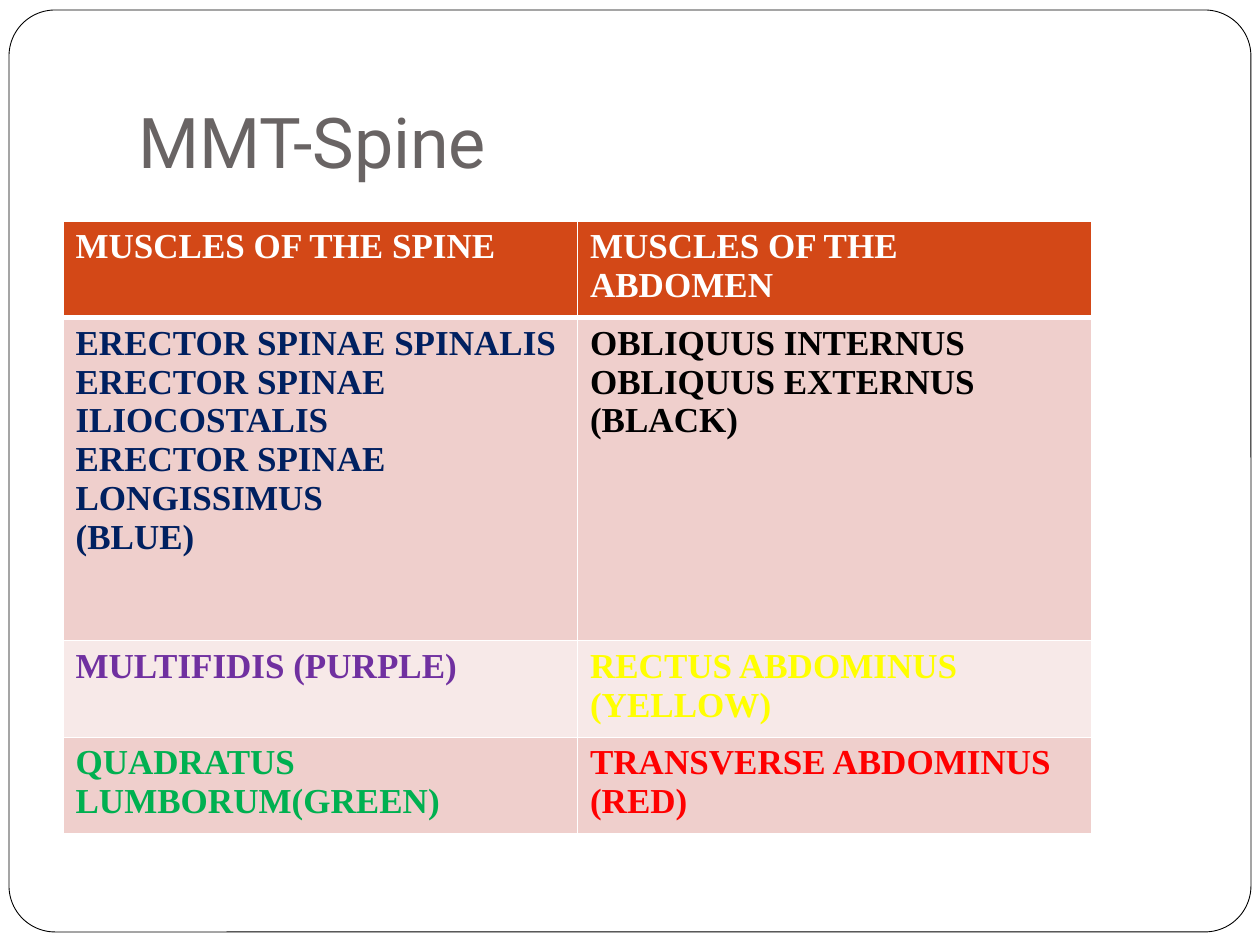
from lxml.etree import SubElement
from pptx import Presentation
from pptx.dml.color import RGBColor
from pptx.enum.shapes import MSO_SHAPE
from pptx.enum.text import MSO_ANCHOR
from pptx.oxml.ns import qn
from pptx.util import Pt

PX_PER_INCH = 126
EMU_PER_INCH = 914400

WHITE = RGBColor(0xFF, 0xFF, 0xFF)
BLACK = RGBColor(0x00, 0x00, 0x00)
GRAY = RGBColor(0x69, 0x64, 0x64)
ORANGE = RGBColor(0xD3, 0x48, 0x17)
ROSE = RGBColor(0xEF, 0xCF, 0xCC)
PALE_ROSE = RGBColor(0xF7, 0xE9, 0xE8)
NAVY = RGBColor(0x00, 0x20, 0x60)
PURPLE = RGBColor(0x70, 0x30, 0xA0)
YELLOW = RGBColor(0xFF, 0xFF, 0x00)
GREEN = RGBColor(0x00, 0xB0, 0x50)
RED = RGBColor(0xFF, 0x00, 0x00)


def px(length):
    return round(length * EMU_PER_INCH / PX_PER_INCH)


class SlideBuilder:
    title_font, title_size = "Roboto", 40
    table_font, table_size = "Times New Roman", 20

    def __init__(self, slide):
        self.slide = slide

    def frame(self, left, top, width, height, corner):
        border = self.slide.shapes.add_shape(
            MSO_SHAPE.ROUNDED_RECTANGLE, px(left), px(top), px(width), px(height))
        border.adjustments[0] = corner
        border.shadow.inherit = False
        border.fill.solid()
        border.fill.fore_color.rgb = WHITE
        border.line.color.rgb = BLACK
        border.line.width = Pt(0.5)

    def run(self, paragraph, text, font, size, color, bold=False):
        run = paragraph.add_run()
        run.text = text
        run.font.name = font
        run.font.size = Pt(size)
        run.font.color.rgb = color
        run.font.bold = bold

    def title(self, text, left, top, width, height):
        box = self.slide.shapes.add_textbox(px(left), px(top), px(width), px(height))
        frame = box.text_frame
        frame.word_wrap = True
        frame.vertical_anchor = MSO_ANCHOR.BOTTOM
        frame.margin_bottom = px(13)
        self.run(frame.paragraphs[0], text, self.title_font, self.title_size, GRAY)

    def table(self, rows, left, top, width, heights):
        columns = len(rows[0][1])
        table = self.slide.shapes.add_table(
            len(rows), columns, px(left), px(top), px(width), px(sum(heights))).table
        for column in table.columns:
            column.width = px(width / columns)
        for r, (fill, cells) in enumerate(rows):
            table.rows[r].height = px(heights[r])
            for c, (color, lines) in enumerate(cells):
                top_width = 3 if r == 1 else 1
                bottom_width = 3 if r == 0 else 1
                self.cell(table.cell(r, c), fill, color, lines, top_width, bottom_width)

    def cell(self, cell, fill, color, lines, top_width, bottom_width):
        # Borders come before the fill in the cell properties
        properties = cell._tc.get_or_add_tcPr()
        for side, width in zip("LRTB", (1, 1, top_width, bottom_width)):
            line = SubElement(properties, qn(f"a:ln{side}"), w=str(Pt(width)))
            SubElement(SubElement(line, qn("a:solidFill")), qn("a:srgbClr"), val=str(WHITE))
        cell.fill.solid()
        cell.fill.fore_color.rgb = fill
        frame = cell.text_frame
        for i, text in enumerate(lines):
            paragraph = frame.add_paragraph() if i else frame.paragraphs[0]
            self.run(paragraph, text, self.table_font, self.table_size, color, bold=True)


MUSCLE_ROWS = [
    (ORANGE, [(WHITE, ["MUSCLES OF THE SPINE"]),
              (WHITE, ["MUSCLES OF THE ABDOMEN"])]),
    (ROSE, [(NAVY, ["ERECTOR SPINAE SPINALIS", "ERECTOR SPINAE ILIOCOSTALIS",
                    "ERECTOR SPINAE LONGISSIMUS", "(BLUE)"]),
            (BLACK, ["OBLIQUUS INTERNUS", "OBLIQUUS EXTERNUS", "(BLACK)"])]),
    (PALE_ROSE, [(PURPLE, ["MULTIFIDIS (PURPLE)"]),
                 (YELLOW, ["RECTUS ABDOMINUS (YELLOW)"])]),
    (ROSE, [(GREEN, ["QUADRATUS LUMBORUM(GREEN)"]),
            (RED, ["TRANSVERSE ABDOMINUS (RED)"])]),
]


def main():
    presentation = Presentation()
    presentation.slide_width = px(1260)
    presentation.slide_height = px(945)
    builder = SlideBuilder(presentation.slides.add_slide(presentation.slide_layouts[6]))

    # Rounded page border
    builder.frame(9, 10, 1242, 922, corner=0.05)
    # Heading
    builder.title("MMT-Spine", 126, 38, 1071, 157)
    # Muscles by region, each in its marking colour
    builder.table(MUSCLE_ROWS, 63, 221, 1029, heights=[90, 323, 90, 90])

    presentation.save("out.pptx")


if __name__ == "__main__":
    main()
